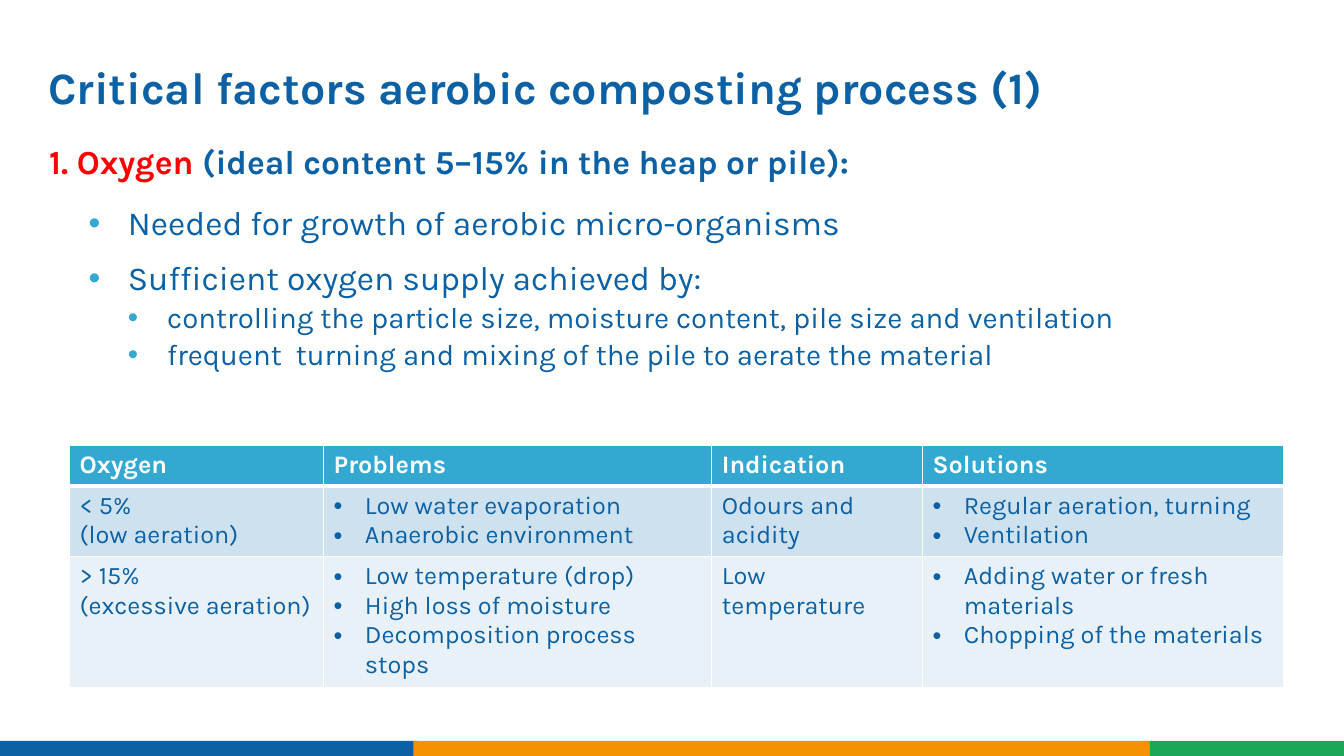
from lxml import etree
from pptx import Presentation
from pptx.dml.color import RGBColor
from pptx.enum import shapes
from pptx.oxml import ns
from pptx.util import Inches, Pt

HUES = {"blue": "0B61A4", "orange": "F59201", "green": "1BA757", "sky": "33A8D1",
        "red": "FF0000", "white": "FFFFFF", "pale": "CEE1EE", "mist": "E8F1F7"}


def style(font, size, hue, bold=False):
    font.name, font.size, font.bold = "Karla", Pt(size), bold
    font.color.rgb = RGBColor.from_string(HUES[hue])


def bullet(par, left, hang, hue):
    """Give a paragraph a hanging round bullet in the given colour."""
    props = par._p.get_or_add_pPr()
    props.set("marL", str(Inches(left)))
    props.set("indent", str(-Inches(hang)))
    paint = etree.SubElement(props, ns.qn("a:buClr"))
    etree.SubElement(paint, ns.qn("a:srgbClr"), val=HUES[hue])
    etree.SubElement(props, ns.qn("a:buFont"), typeface="Arial")
    etree.SubElement(props, ns.qn("a:buChar"), char="•")


deck = Presentation()
deck.slide_width, deck.slide_height = Inches(13.33), Inches(7.5)
slide = deck.slides.add_slide(deck.slide_layouts[6])

# Footer stripe
for left, width, hue in [(0, 4.14, "blue"), (4.1, 7.3, "orange"), (11.4, 1.93, "green")]:
    bar = slide.shapes.add_shape(shapes.MSO_SHAPE.RECTANGLE, Inches(left), Inches(7.35),
                                 Inches(width), Inches(0.15))
    bar.shadow.inherit = False
    bar.fill.solid()
    bar.fill.fore_color.rgb = RGBColor.from_string(HUES[hue])
    bar.line.fill.background()

# Title
title = slide.shapes.add_textbox(Inches(0.38), Inches(0.6), Inches(11.3), Inches(0.71))
title.text_frame.word_wrap = True
par = title.text_frame.paragraphs[0]
par.text = "Critical factors aerobic composting process (1)"
par.line_spacing = 0.9
style(par.font, 32, "blue", True)

# Body
body = slide.shapes.add_textbox(Inches(0.39), Inches(1.39), Inches(12.94), Inches(2.6))
frame = body.text_frame
frame.word_wrap = True
head = frame.paragraphs[0]
head.line_spacing = 0.9
for words, hue in [("1. Oxygen ", "red"),
                   ("(ideal content 5–15% in the heap or pile):", "blue")]:
    run = head.add_run()
    run.text = words
    style(run.font, 24, hue, True)

points = [  # level, size, space before, space after, text
    (0, 24, 18, 6, "Needed for growth of aerobic micro-organisms"),
    (0, 24, 7.5, 0, "Sufficient oxygen supply achieved by:"),
    (1, 21, 3.8, 0, "controlling the particle size, moisture content, pile size and ventilation"),
    (1, 21, 3.8, 0, "frequent  turning and mixing of the pile to aerate the material"),
]
for level, size, before, after, words in points:
    par = frame.add_paragraph()
    par.text, par.level = words, level
    par.line_spacing = 0.9
    par.space_before, par.space_after = Pt(before), Pt(after)
    bullet(par, 0.39 * (level + 2), 0.39, "sky")
    style(par.font, size, "blue")

# Table: a list in a cell is bulleted
rows = [
    ["Oxygen", "Problems", "Indication", "Solutions"],
    ["< 5%\v(low aeration)", ["Low water evaporation", "Anaerobic environment"],
     "Odours and acidity", ["Regular aeration, turning", "Ventilation"]],
    ["> 15%\v(excessive aeration)",
     ["Low temperature (drop)", "High loss of moisture", "Decomposition process stops"],
     "Low temperature", ["Adding water or fresh materials", "Chopping of the materials"]],
]
fills = ["sky", "pale", "mist"]
grid = slide.shapes.add_table(3, 4, Inches(0.69), Inches(4.42),
                              Inches(12.04), Inches(2.16)).table
for col, width in zip(grid.columns, [2.52, 3.85, 2.09, 3.58]):
    col.width = Inches(width)
for row, height in zip(grid.rows, [0.37, 0.65, 1.14]):
    row.height = Inches(height)

for r, row in enumerate(rows):
    for c, item in enumerate(row):
        cell = grid.cell(r, c)
        props = cell._tc.get_or_add_tcPr()
        for side in "LRTB":
            thick = (r, side) in [(0, "B"), (1, "T")]
            edge = etree.SubElement(props, ns.qn("a:ln" + side), w=str(Pt(3 if thick else 1)))
            paint = etree.SubElement(edge, ns.qn("a:solidFill"))
            etree.SubElement(paint, ns.qn("a:srgbClr"), val=HUES["white"])
        cell.fill.solid()
        cell.fill.fore_color.rgb = RGBColor.from_string(HUES[fills[r]])
        listed = isinstance(item, list)
        for i, words in enumerate(item if listed else [item]):
            par = cell.text_frame.add_paragraph() if i else cell.text_frame.paragraphs[0]
            par.text = words
            if listed:
                bullet(par, 0.31, 0.31, "blue")
            style(par.font, 18, "blue" if r else "white", r == 0)

deck.save("out.pptx")
